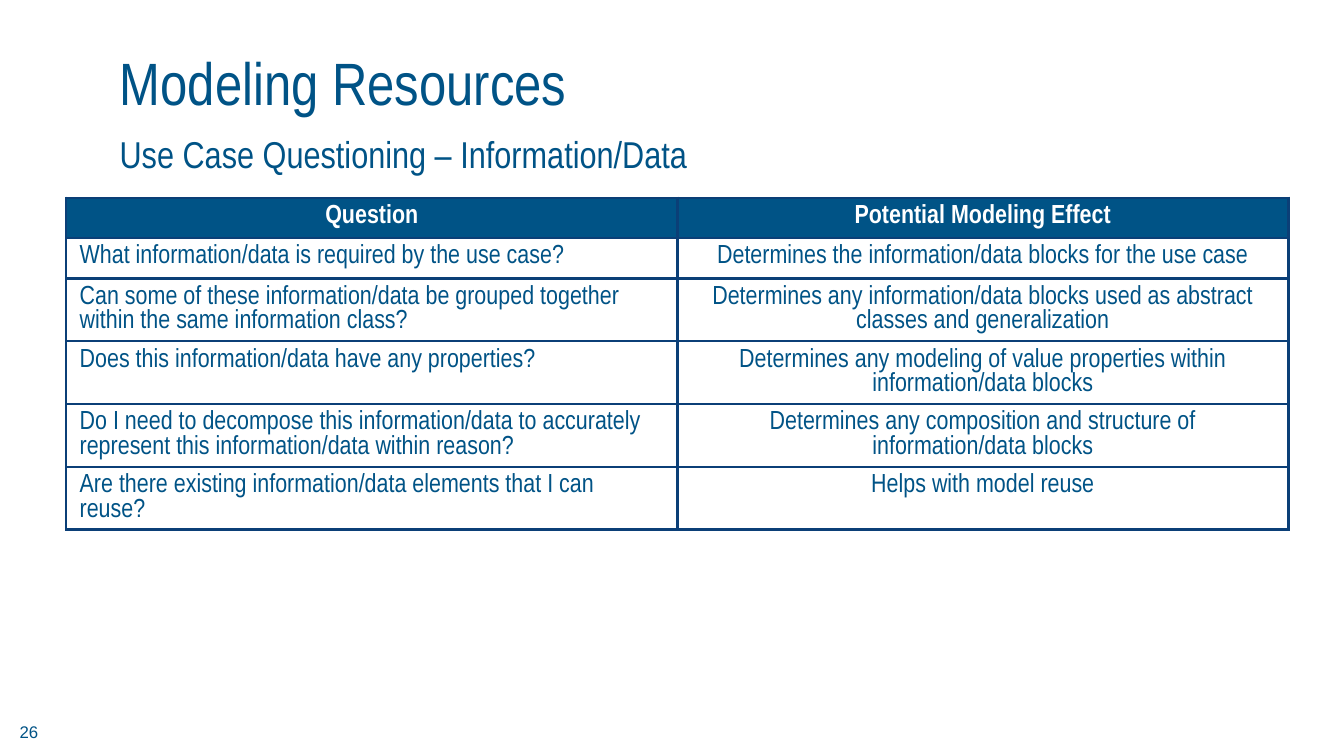
from lxml import etree
from pptx import Presentation
from pptx import util as u
from pptx.dml.color import RGBColor
from pptx.enum import text
from pptx.oxml import ns

TITLE = "Modeling Resources"
SUBTITLE = "Use Case Questioning – Information/Data"
PAGE_NUMBER = "26"
HEADER = ("Question", "Potential Modeling Effect")
QUESTIONS = [
    ("What information/data is required by the use case?",
     "Determines the information/data blocks for the use case"),
    ("Can some of these information/data be grouped together within the same information class?",
     "Determines any information/data blocks used as abstract classes and generalization"),
    ("Does this information/data have any properties?",
     "Determines any modeling of value properties within information/data blocks"),
    ("Do I need to decompose this information/data to accurately represent this information/data within reason?",
     "Determines any composition and structure of information/data blocks"),
    ("Are there existing information/data elements that I can reuse?",
     "Helps with model reuse"),
]

BLUE = RGBColor(0x00, 0x53, 0x86)
BORDER = RGBColor(0x0B, 0x3F, 0x77)
WHITE = RGBColor(0xFF, 0xFF, 0xFF)
NARROW = "Arial Narrow"
LEFT, CENTER = text.PP_ALIGN.LEFT, text.PP_ALIGN.CENTER
TOP, MIDDLE = text.MSO_ANCHOR.TOP, text.MSO_ANCHOR.MIDDLE
ROW_HEIGHT = 21.6
COLUMN_WIDTH = 327.4


def write(frame, words, size, font=NARROW, color=BLUE, align=LEFT, bold=False):
    frame.word_wrap = True
    paragraph = frame.paragraphs[0]
    paragraph.alignment = align
    run = paragraph.add_run()
    run.text = words
    run.font.name = font
    run.font.size = u.Pt(size)
    run.font.bold = bold
    run.font.color.rgb = color
    return paragraph


def place(shape, left, top, width, height, anchor):
    shape.left, shape.top = u.Pt(left), u.Pt(top)
    shape.width, shape.height = u.Pt(width), u.Pt(height)
    shape.text_frame.auto_size = text.MSO_AUTO_SIZE.NONE
    shape.text_frame.vertical_anchor = anchor
    return shape.text_frame


def add_borders(cell):
    properties = cell._tc.get_or_add_tcPr()
    for index, side in enumerate(("lnL", "lnR", "lnT", "lnB")):
        line = etree.Element(ns.qn("a:" + side), w=str(u.Pt(1.5)))
        fill = etree.SubElement(line, ns.qn("a:solidFill"))
        etree.SubElement(fill, ns.qn("a:srgbClr"), val=str(BORDER))
        properties.insert(index, line)


def add_question_table(slide):
    rows = [HEADER] + QUESTIONS
    frame = slide.shapes.add_table(
        len(rows), len(HEADER), u.Pt(35.5), u.Pt(106),
        u.Pt(COLUMN_WIDTH * len(HEADER)), u.Pt(ROW_HEIGHT * len(rows)))
    table = frame.table
    for row_index, row in enumerate(rows):
        is_header = row_index == 0
        for column_index, words in enumerate(row):
            cell = table.cell(row_index, column_index)
            if is_header:
                cell.fill.solid()
                cell.fill.fore_color.rgb = BLUE
            else:
                cell.fill.background()
            add_borders(cell)
            paragraph = write(
                cell.text_frame, words, 14,
                color=WHITE if is_header else BLUE,
                align=CENTER if is_header or column_index else LEFT,
                bold=is_header)
            paragraph.line_spacing = u.Pt(13.2)


def main():
    presentation = Presentation()
    presentation.slide_width, presentation.slide_height = u.Pt(720), u.Pt(405)
    slide = presentation.slides.add_slide(presentation.slide_layouts[5])

    title = place(slide.shapes.title, 57, 29, 623.5, 29.5, MIDDLE)
    write(title, TITLE, 32)
    subtitle = slide.shapes.add_textbox(0, 0, 0, 0)
    write(place(subtitle, 57, 66.5, 625, 31, TOP), SUBTITLE, 20)
    add_question_table(slide)
    page_number = slide.shapes.add_textbox(0, 0, 0, 0)
    write(place(page_number, 0, 378, 31, 28, MIDDLE), PAGE_NUMBER, 9, font="Arial", align=CENTER)

    presentation.save("out.pptx")


if __name__ == "__main__":
    main()
